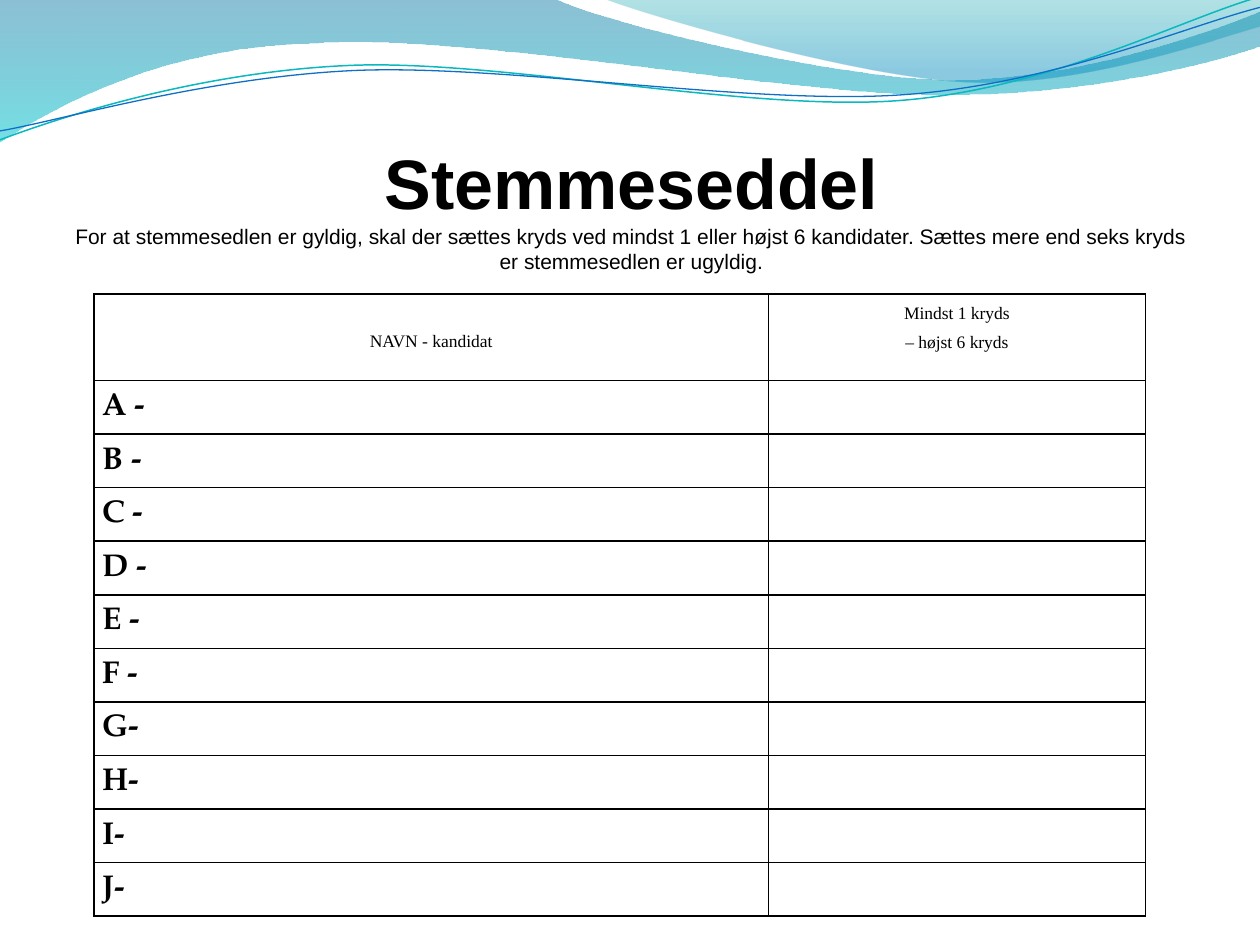
import pptx
import pptx.util
import pptx.dml.color
import pptx.enum.text
import pptx.oxml.ns
from lxml import etree

Cm, Pt = pptx.util.Cm, pptx.util.Pt
RGBColor = pptx.dml.color.RGBColor
Align = pptx.enum.text.PP_ALIGN
Anchor = pptx.enum.text.MSO_ANCHOR
qn = pptx.oxml.ns.qn

BLACK = RGBColor(0x00, 0x00, 0x00)
NAVY = RGBColor(0x00, 0x74, 0xA1)
CYAN = RGBColor(0x00, 0xC6, 0xCF)
TEAL = RGBColor(0x00, 0xA1, 0xA9)
SKY = RGBColor(0x00, 0x8B, 0xBF)
AQUA = RGBColor(0x0A, 0xB8, 0xBF)
BLUE = RGBColor(0x0F, 0x6F, 0xC6)

# Outlines in cm: a start point, then steps of one point (line) or three (curve).
BAND = [(0, 0), [(11.18, -0.03)],
        [(12.09, 0.43), (16.87, 1.6), (19.25, 1.6)],
        [(21.67, 1.6), (24.33, 0.66), (25.4, 0.23)],
        [(25.43, 0.91)],
        [(24.97, 1.12), (22.1, 1.93), (18.95, 1.91)],
        [(15.8, 1.91), (9.7, 0.71), (6.53, 0.86)],
        [(3.28, 0.91), (1.17, 2.11), (-0.03, 2.87)],
        [(0, 0)]]
CREST = [(12.17, -0.03),
         [(12.93, 0.28), (17.32, 1.57), (19.53, 1.65)],
         [(21.74, 1.75), (24.41, 0.81), (25.4, 0.53)],
         [(25.4, 0)], [(12.17, -0.03)]]
UPPER = [(0, 2.82),
         [(1.22, 2.36), (4.01, 1.45), (7.04, 1.32)],
         [(10.03, 1.19), (15.06, 2.26), (18.11, 2.03)],
         [(21.16, 1.8), (23.83, 0.38), (25.35, -0.05)]]
LOWER = [(0, 2.64),
         [(1.19, 2.44), (4.17, 1.55), (7.19, 1.42)],
         [(10.24, 1.3), (15.16, 2.13), (18.21, 1.91)],
         [(21.23, 1.7), (23.9, 0.53), (25.4, 0.15)]]

NAMES = ["A -", "B -", "C -", "D -", "E -", "F -", "G-", "H-", "I-", "J-"]
RULE = ("For at stemmesedlen er gyldig, skal der sættes kryds ved mindst 1 eller "
        "højst 6 kandidater. Sættes mere end seks kryds er stemmesedlen er ugyldig.")


def bend(shape, steps):
    """Join the lines of each three-point step into one Bézier curve."""
    lines = iter(list(shape.element.iter(qn("a:lnTo"))))
    for step in steps:
        group = [next(lines) for _ in step]
        if len(group) == 3:
            curve = etree.Element(qn("a:cubicBezTo"))
            group[0].addprevious(curve)
            for line in group:
                curve.append(line[0])
                line.getparent().remove(line)


def write(para, text, font, size, bold=False, align=Align.LEFT, space=None):
    para.alignment = align
    if space:
        para.line_spacing = space
    run = para.add_run()
    run.text = text
    run.font.name = font
    run.font.size = Pt(size)
    run.font.bold = bold
    run.font.color.rgb = BLACK


class Ballot:
    head = dict(font="Times New Roman", size=10, align=Align.CENTER, space=1.5)
    name = dict(font="TeX Gyre Pagella", size=18, bold=True, space=1.4)
    title = dict(font="Arial", size=40, bold=True, align=Align.CENTER)
    note = dict(font="Arial", size=12, align=Align.CENTER)

    def __init__(self, slide):
        self.slide = slide

    def shape(self, path, close):
        start, *steps = path
        build = self.slide.shapes.build_freeform(*map(Cm, start))
        build.add_line_segments(
            [(Cm(x), Cm(y)) for step in steps for x, y in step], close=close)
        shape = build.convert_to_shape()
        bend(shape, steps)
        shape.shadow.inherit = False
        return shape

    def wave(self, path, *stops):
        """Draw a filled outline; each stop is place, colour, opacity in percent."""
        shape = self.shape(path, True)
        shape.line.fill.background()
        shape.fill.gradient()
        shape.fill.gradient_angle = 270
        for stop, (place, color, _) in zip(shape.fill.gradient_stops, stops):
            stop.position = place
            stop.color.rgb = color
        for node, (_, _, alpha) in zip(shape.element.iter(qn("a:gs")), stops):
            etree.SubElement(node[0], qn("a:alpha"), val=str(alpha * 1000))

    def curve(self, path, color, width):
        shape = self.shape(path, False)
        shape.fill.background()
        shape.line.color.rgb = color
        shape.line.width = Pt(width)

    def heading(self, title, note):
        box = self.slide.shapes.add_textbox(Cm(1.3), Cm(1.33), Cm(22.86), Cm(4.19))
        frame = box.text_frame
        frame.word_wrap = True
        frame.vertical_anchor = Anchor.BOTTOM
        frame.margin_left = frame.margin_right = frame.margin_bottom = 0
        para = frame.paragraphs[0]
        write(para, title, **self.title)
        para.add_line_break()
        write(para, note, **self.note)

    def border(self, cell):
        props = cell._tc.get_or_add_tcPr()
        for i, side in enumerate("LRTB"):
            line = etree.Element(qn("a:ln" + side), w=str(Pt(1)))
            fill = etree.SubElement(line, qn("a:solidFill"))
            etree.SubElement(fill, qn("a:srgbClr"), val=str(BLACK))
            props.insert(i, line)

    def table(self, names):
        rows = len(names) + 1
        grid = self.slide.shapes.add_table(
            rows, 2, Cm(1.89), Cm(5.93), Cm(21.2), Cm(12.5)).table
        for col, width in zip(grid.columns, (13.6, 7.6)):
            col.width = Cm(width)
        for i, row in enumerate(grid.rows):
            row.height = Cm(1.08 if i else 1.74)
        for cell in grid.iter_cells():
            cell.fill.background()
            cell.margin_left = cell.margin_right = Cm(0.17)
            cell.margin_top = cell.margin_bottom = 0
            self.border(cell)

        left, right = grid.cell(0, 0), grid.cell(0, 1)
        left.margin_top = Cm(0.56)
        write(left.text_frame.paragraphs[0], "NAVN - kandidat", **self.head)
        write(right.text_frame.paragraphs[0], "Mindst 1 kryds", **self.head)
        write(right.text_frame.add_paragraph(), "– højst 6 kryds", **self.head)
        for i, name in enumerate(names, 1):
            write(grid.cell(i, 0).text_frame.paragraphs[0], name, **self.name)


def main():
    deck = pptx.Presentation()
    deck.slide_width, deck.slide_height = Cm(25.4), Cm(19.05)
    page = Ballot(deck.slides.add_slide(deck.slide_layouts[6]))
    page.wave(BAND, (0, NAVY, 45), (1, CYAN, 55))
    page.wave(CREST, (0, TEAL, 30), (0.8, SKY, 45))
    page.curve(UPPER, AQUA, 0.85)
    page.curve(LOWER, BLUE, 0.75)
    page.heading("Stemmeseddel", RULE)
    page.table(NAMES)
    deck.save("out.pptx")


if __name__ == "__main__":
    main()
